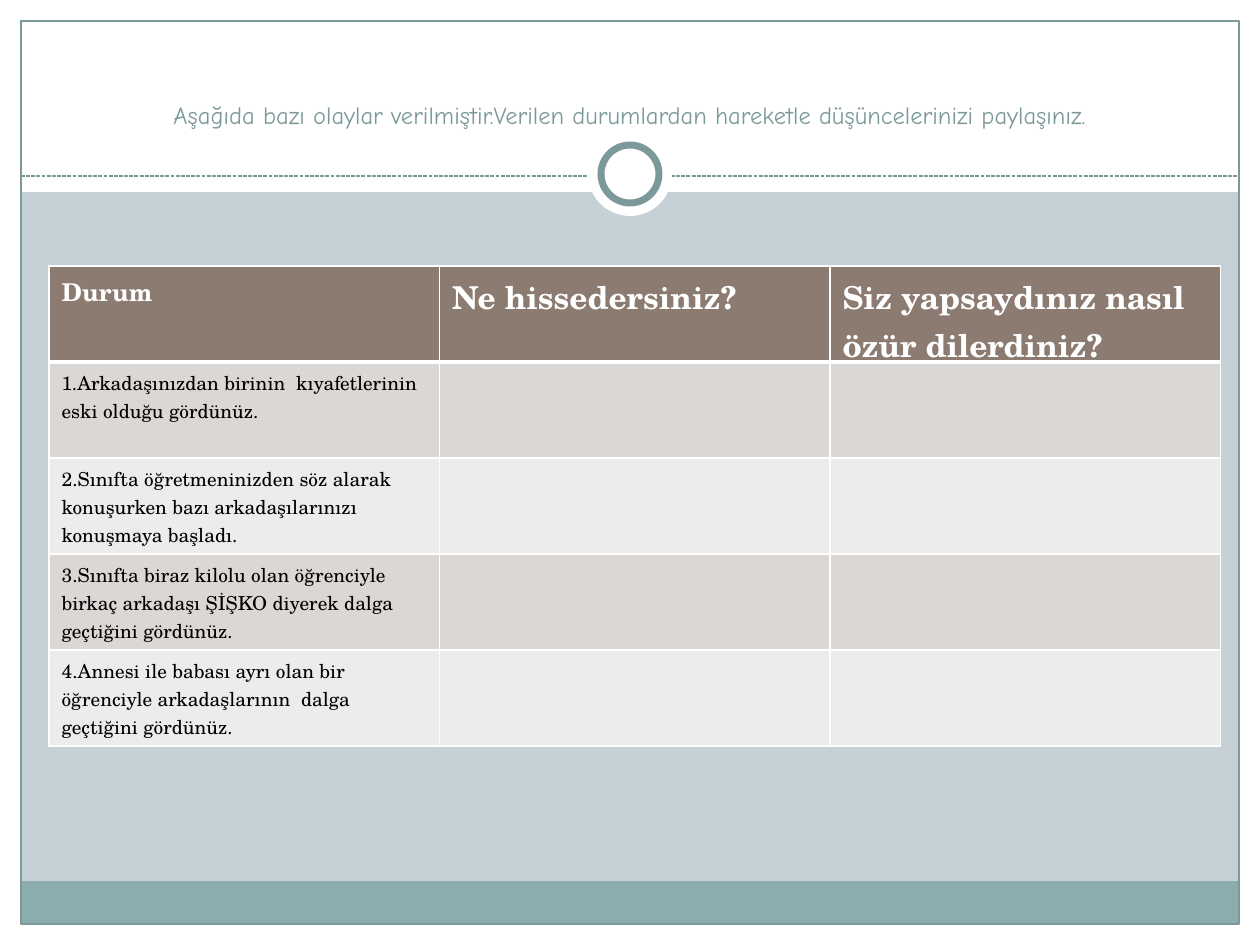
from lxml.etree import SubElement
from pptx import Presentation
from pptx.dml.color import RGBColor
from pptx.enum.dml import MSO_LINE
from pptx.enum.shapes import MSO_CONNECTOR, MSO_SHAPE as SHAPE
from pptx.enum.text import MSO_ANCHOR, PP_ALIGN
from pptx.oxml.ns import qn
from pptx.util import Pt

WHITE = RGBColor(0xFF, 0xFF, 0xFF)
BLACK = RGBColor(0, 0, 0)
MIST = RGBColor(0xC5, 0xD1, 0xD7)
TEAL = RGBColor(0x8C, 0xAD, 0xAE)
SLATE = RGBColor(0x7C, 0x99, 0x9A)
BROWN = RGBColor(0x8C, 0x7B, 0x70)
BANDS = (RGBColor(0xDA, 0xD7, 0xD5), RGBColor(0xEE, 0xEC, 0xEB))

INSTRUCTION = ("Aşağıda bazı olaylar verilmiştir.Verilen durumlardan hareketle "
               "düşüncelerinizi paylaşınız.")
HEADINGS = [
    ("Durum", 14),
    ("Ne hissedersiniz?", 18),
    ("Siz yapsaydınız nasıl özür dilerdiniz?", 18),
]
SITUATIONS = [
    "1.Arkadaşınızdan birinin  kıyafetlerinin eski olduğu gördünüz.",
    "2.Sınıfta öğretmeninizden söz alarak konuşurken bazı arkadaşılarınızı konuşmaya başladı.",
    "3.Sınıfta biraz kilolu olan öğrenciyle birkaç arkadaşı ŞİŞKO diyerek dalga geçtiğini gördünüz.",
    "4.Annesi ile babası ayrı olan bir öğrenciyle arkadaşlarının  dalga geçtiğini gördünüz.",
]

WIDTH, HEIGHT, MARGIN = 1260, 945, 21
INNER_W, INNER_H = WIDTH - 2 * MARGIN, HEIGHT - 2 * MARGIN
RULE_Y = 176
BAND_H = 43
TABLE_X, TABLE_Y, COLUMN_W, ROW_H = 49, 266, 390.5, 96
DISC, RING = 84, 58

BACKDROP = [
    (SHAPE.RECTANGLE, (0, HEIGHT - MARGIN, WIDTH, MARGIN), WHITE, None),
    (SHAPE.RECTANGLE, (0, 0, WIDTH, 192), WHITE, None),
    (SHAPE.RECTANGLE, (0, 0, MARGIN, HEIGHT), WHITE, None),
    (SHAPE.RECTANGLE, (WIDTH - MARGIN, 0, MARGIN, HEIGHT), WHITE, None),
    (SHAPE.RECTANGLE, (MARGIN, HEIGHT - MARGIN - BAND_H, INNER_W, BAND_H), TEAL, None),
    (SHAPE.RECTANGLE, (MARGIN, MARGIN, INNER_W, INNER_H), None, 0.75),
]
MEDALLION = [
    (SHAPE.OVAL, ((WIDTH - DISC) / 2, 132, DISC, DISC), WHITE, None),
    (SHAPE.OVAL, ((WIDTH - RING) / 2, 145, RING, RING), WHITE, 4),
]


def px(length):
    return round(length * 914400 / 126)


def add_panel(slide, kind, box, fill, line_width):
    panel = slide.shapes.add_shape(kind, *map(px, box))
    panel.shadow.inherit = False
    if fill is None:
        panel.fill.background()
    else:
        panel.fill.solid()
        panel.fill.fore_color.rgb = fill
    if line_width is None:
        panel.line.fill.background()
    else:
        panel.line.color.rgb = SLATE
        panel.line.width = Pt(line_width)


def add_rule(slide):
    rule = slide.shapes.add_connector(
        MSO_CONNECTOR.STRAIGHT, *map(px, (MARGIN, RULE_Y, WIDTH - MARGIN, RULE_Y)))
    rule.line.color.rgb = SLATE
    rule.line.width = Pt(0.75)
    rule.line.dash_style = MSO_LINE.SQUARE_DOT
    SubElement(rule._element.spPr, qn("a:effectLst"))


def write(frame, text, color, **formats):
    run = frame.paragraphs[0].add_run()
    run.text = text
    run.font.color.rgb = color
    for name, value in formats.items():
        setattr(run.font, name, value)


def add_instruction(slide):
    frame = slide.shapes.add_textbox(*map(px, (42, 31, 1176, 105))).text_frame
    frame.word_wrap = True
    frame.vertical_anchor = MSO_ANCHOR.BOTTOM
    frame.paragraphs[0].alignment = PP_ALIGN.CENTER
    write(frame, INSTRUCTION, SLATE, size=Pt(14), name="Comic Neue")


def style_cell(cell, fill, top=1, bottom=1):
    properties = cell._tc.get_or_add_tcPr()
    for side, width in {"L": 1, "R": 1, "T": top, "B": bottom}.items():
        border = SubElement(properties, qn(f"a:ln{side}"), w=str(Pt(width)))
        paint = SubElement(border, qn("a:solidFill"))
        SubElement(paint, qn("a:srgbClr"), val=str(WHITE))
    cell.fill.solid()
    cell.fill.fore_color.rgb = fill


def add_situations(slide):
    rows, columns = len(SITUATIONS) + 1, len(HEADINGS)
    table = slide.shapes.add_table(rows, columns, *map(
        px, (TABLE_X, TABLE_Y, COLUMN_W * columns, ROW_H * rows))).table
    for column in table.columns:
        column.width = px(COLUMN_W)
    for row in table.rows:
        row.height = px(ROW_H)
    for c, (heading, size) in enumerate(HEADINGS):
        cell = table.cell(0, c)
        style_cell(cell, BROWN, bottom=3)
        write(cell.text_frame, heading, WHITE,
              size=Pt(size), name="TeX Gyre Schola", bold=True)
    for r, situation in enumerate(SITUATIONS, 1):
        for c in range(columns):
            style_cell(table.cell(r, c), BANDS[(r - 1) % 2], top=3 if r == 1 else 1)
        write(table.cell(r, 0).text_frame, situation, BLACK,
              size=Pt(11), name="TeX Gyre Schola", bold=False)


def main():
    deck = Presentation()
    deck.slide_width, deck.slide_height = px(WIDTH), px(HEIGHT)
    slide = deck.slides.add_slide(deck.slide_layouts[6])
    slide.background.fill.solid()
    slide.background.fill.fore_color.rgb = MIST
    for panel in BACKDROP:
        add_panel(slide, *panel)
    add_rule(slide)
    for panel in MEDALLION:
        add_panel(slide, *panel)
    add_instruction(slide)
    add_situations(slide)
    deck.save("out.pptx")


if __name__ == "__main__":
    main()
